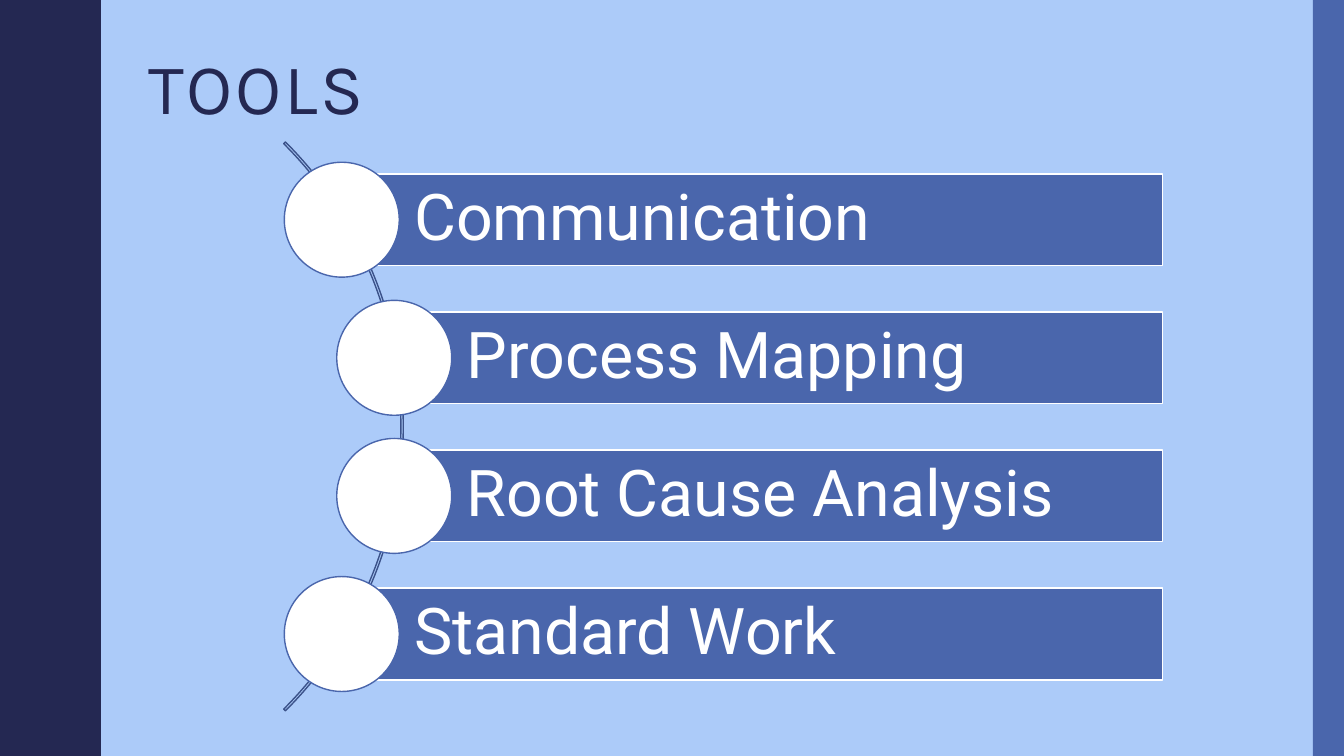
"""Build the Tools slide: four bars fanned along an arc."""
from pptx import Presentation
from pptx.dml.color import RGBColor
from pptx.enum.shapes import MSO_SHAPE
from pptx.enum.text import MSO_ANCHOR, PP_ALIGN
from pptx.util import Inches, Pt

RECTANGLE, OVAL, BLOCK_ARC = MSO_SHAPE.RECTANGLE, MSO_SHAPE.OVAL, MSO_SHAPE.BLOCK_ARC
MIDDLE, LEFT = MSO_ANCHOR.MIDDLE, PP_ALIGN.LEFT
NAVY = RGBColor(0x24, 0x28, 0x52)
BLUE = RGBColor(0x4A, 0x66, 0xAC)
ARC_BLUE = RGBColor(0x3B, 0x52, 0x8A)
SKY = RGBColor(0xAC, 0xCB, 0xF9)
WHITE = RGBColor(0xFF, 0xFF, 0xFF)

WIDTH, HEIGHT = 13.33, 7.5
STRIPE = 0.31
WAVE_PERIOD = HEIGHT / 5
HALF_WAVE = [(0.78, 0), (0.78, 0.07), (0.79, 0.14), (0.8, 0.2), (0.81, 0.25),
             (0.83, 0.29), (0.85, 0.33), (0.87, 0.38), (0.89, 0.42), (0.91, 0.46),
             (0.93, 0.5), (0.95, 0.55), (0.96, 0.61), (0.97, 0.68), (0.97, 0.75)]
TOOLS = ["Communication", "Process Mapping", "Root Cause Analysis", "Standard Work"]
BAR_LEFTS = [3.39, 3.91, 3.91, 3.39]
BAR_RIGHT, BAR_HEIGHT = 11.53, 0.91
FIRST_CENTER, ROW_PITCH = 2.18, 1.37
DISC = 1.14


def add_shape(kind, left, top, width, height, fill=None, line=None):
    shape = slide.shapes.add_shape(
        kind, Inches(left), Inches(top), Inches(width), Inches(height))
    return paint(shape, fill, line)


def paint(shape, fill, line):
    shape.shadow.inherit = False
    if fill is None:
        shape.fill.background()
    else:
        shape.fill.solid()
        shape.fill.fore_color.rgb = fill
    if line is None:
        shape.line.fill.background()
    else:
        shape.line.color.rgb = line
        shape.line.width = Pt(1)
    return shape


prs = Presentation()
prs.slide_width, prs.slide_height = Inches(WIDTH), Inches(HEIGHT)
slide = prs.slides.add_slide(prs.slide_layouts[5])
slide.background.fill.solid()
slide.background.fill.fore_color.rgb = SKY

full_wave = HALF_WAVE + [(x, WAVE_PERIOD - y) for x, y in HALF_WAVE[-2::-1]]
wave_edge = [(x, crest * WAVE_PERIOD + y) for crest in range(5) for x, y in full_wave]
outline = slide.shapes.build_freeform(0, 0, scale=Inches(1))
outline.add_line_segments(wave_edge + [(0, HEIGHT)], close=True)
paint(outline.convert_to_shape(), NAVY, None)
add_shape(RECTANGLE, WIDTH - STRIPE, 0, STRIPE, HEIGHT, BLUE)

title = slide.shapes.title
title.left, title.top = Inches(1.37), Inches(0.42)
title.width, title.height = Inches(11.13), Inches(0.98)
title.text_frame.text = "TOOLS"
title.text_frame.vertical_anchor = MIDDLE
heading = title.text_frame.paragraphs[0]
heading.alignment = LEFT
heading.line_spacing = 0.9
heading_run = heading.runs[0]
heading_run.font.name = "Karla"
heading_run.font.size = Pt(51)
heading_run.font.color.rgb = NAVY
heading_run.font._element.set("spc", "200")

arc = add_shape(BLOCK_ARC, -3.98, 0.24, 7.98, 7.98, line=ARC_BLUE)
for index, value in enumerate([189, 27, 0.003]):
    arc.adjustments[index] = value

for row, (tool, left) in enumerate(zip(TOOLS, BAR_LEFTS)):
    center = FIRST_CENTER + row * ROW_PITCH
    bar = add_shape(RECTANGLE, left, center - BAR_HEIGHT / 2,
                    BAR_RIGHT - left, BAR_HEIGHT, BLUE, WHITE)
    frame = bar.text_frame
    frame.text = tool
    frame.word_wrap = True
    frame.vertical_anchor = MIDDLE
    frame.margin_left = Inches(0.72)
    frame.margin_top = frame.margin_right = frame.margin_bottom = Inches(0.13)
    label = frame.paragraphs[0]
    label.alignment = LEFT
    label.line_spacing = 0.9
    label.runs[0].font.name = "Roboto"
    label.runs[0].font.size = Pt(46)
    label.runs[0].font.color.rgb = WHITE
    add_shape(OVAL, left - DISC / 2, center - DISC / 2, DISC, DISC, WHITE, BLUE)

prs.save("out.pptx")
